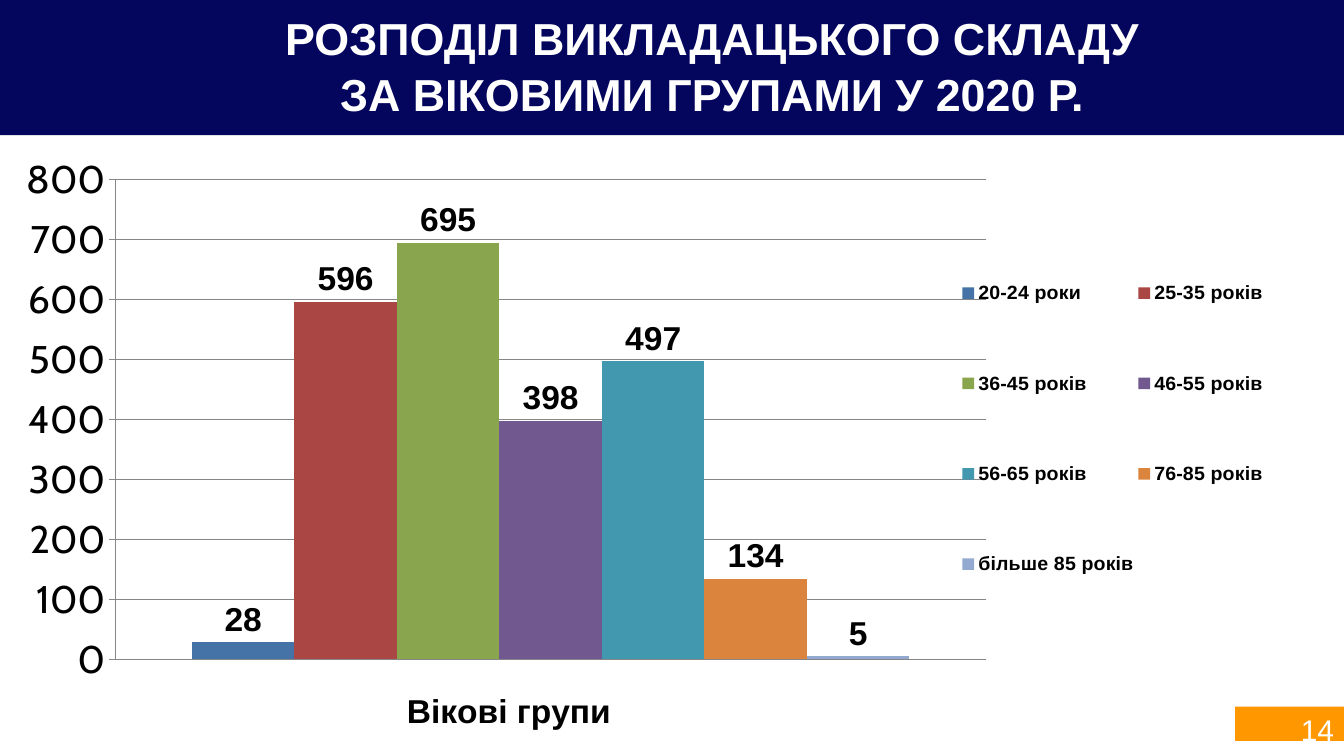
import pptx
import pptx.chart.data
import pptx.dml.color
import pptx.enum.chart
import pptx.enum.shapes
import pptx.enum.text
import pptx.oxml
import pptx.oxml.ns
import pptx.util
from pptx.util import Inches

COLORS = {
    "band": "04065D",
    "badge": "FF9800",
    "white": "FFFFFF",
    "black": "000000",
    "grid": "868686",
}
AGE_GROUPS = [
    ("20-24 роки", 28, "4572A7"),
    ("25-35 років", 596, "AA4643"),
    ("36-45 років", 695, "89A54E"),
    ("46-55 років", 398, "71588F"),
    ("56-65 років", 497, "4198AF"),
    ("76-85 років", 134, "DB843D"),
    ("більше 85 років", 5, "93A9CF"),
]


def rgb(value):
    return pptx.dml.color.RGBColor.from_string(value)


def set_font(font, size, color="black", bold=False, name="Arial"):
    font.name = name
    font.size = pptx.util.Pt(size)
    font.bold = bold
    font.color.rgb = rgb(COLORS[color])


def write_text(frame, text, align="CENTER", spacing=1.0, **font_format):
    """Fill a text frame with one paragraph; newlines become line breaks."""
    frame.word_wrap = True
    frame.auto_size = pptx.enum.text.MSO_AUTO_SIZE.NONE
    frame.vertical_anchor = pptx.enum.text.MSO_ANCHOR.TOP
    para = frame.paragraphs[0]
    para.alignment = getattr(pptx.enum.text.PP_ALIGN, align)
    para.line_spacing = spacing
    for number, line in enumerate(text.split("\n")):
        if number:
            para.add_line_break()
        span = para.add_run()
        span.text = line
        set_font(span.font, **font_format)


def place(shape, left, top, width, height):
    shape.left, shape.top = Inches(left), Inches(top)
    shape.width, shape.height = Inches(width), Inches(height)


def add_rectangle(slide, left, top, width, height, color):
    box = slide.shapes.add_shape(
        pptx.enum.shapes.MSO_SHAPE.RECTANGLE,
        Inches(left), Inches(top), Inches(width), Inches(height))
    box.shadow.inherit = False
    box.fill.solid()
    box.fill.fore_color.rgb = rgb(COLORS[color])
    box.line.fill.background()
    return box


def set_layout(element, inner=False, **fractions):
    """Place a chart part by fractions (x, y, w, h) of the chart area."""
    qn = pptx.oxml.ns.qn
    for old in element.findall(qn("c:layout")):
        element.remove(old)
    target = '<c:layoutTarget val="inner"/>' if inner else ""
    modes = "".join(f'<c:{key}Mode val="edge"/>' for key in "xy")
    sizes = "".join(f'<c:{key} val="{value}"/>' for key, value in fractions.items())
    layout = pptx.oxml.parse_xml(
        f'<c:layout {pptx.oxml.ns.nsdecls("c")}><c:manualLayout>'
        f"{target}{modes}{sizes}</c:manualLayout></c:layout>")
    overlay = element.find(qn("c:overlay"))
    if overlay is None:
        element.insert(0, layout)
    else:
        overlay.addprevious(layout)


def format_axes(chart):
    values = chart.value_axis
    values.minimum_scale, values.maximum_scale = 0, 800
    values.major_unit = 100
    set_font(values.tick_labels.font, 28, name="Cabin")
    for line in (values.format.line, values.major_gridlines.format.line,
                 chart.category_axis.format.line):
        line.color.rgb = rgb(COLORS["grid"])
        line.width = pptx.util.Pt(0.75)

    groups = chart.category_axis
    groups.tick_label_position = pptx.enum.chart.XL_TICK_LABEL_POSITION.NONE
    groups.major_tick_mark = pptx.enum.chart.XL_TICK_MARK.NONE
    span = groups.axis_title.text_frame.paragraphs[0].add_run()
    span.text = "Вікові групи"
    set_font(span.font, 24, bold=True)
    set_layout(groups.axis_title._element, x=0.3, y=0.92)


def format_columns(plot):
    plot.gap_width, plot.overlap = 150, 0
    plot.vary_by_categories = False
    for series, (_, _, color) in zip(plot.series, AGE_GROUPS):
        series.format.fill.solid()
        series.format.fill.fore_color.rgb = rgb(color)
        labels = series.data_labels
        labels.show_value = True
        labels.position = pptx.enum.chart.XL_LABEL_POSITION.OUTSIDE_END
        set_font(labels.font, 24, bold=True)


def add_age_chart(slide):
    data = pptx.chart.data.CategoryChartData()
    data.categories = ["1"]
    for name, count, _ in AGE_GROUPS:
        data.add_series(name, [count])
    chart = slide.shapes.add_chart(
        pptx.enum.chart.XL_CHART_TYPE.COLUMN_CLUSTERED,
        Inches(0.26), Inches(1.55), Inches(12.31), Inches(5.8), data).chart
    set_font(chart.font, 10, name="Cabin")
    chart.has_title = False
    format_axes(chart)
    format_columns(chart.plots[0])
    set_layout(chart._chartSpace.chart.plotArea, inner=True,
               x=0.069, y=0.041, w=0.704, h=0.836)

    chart.has_legend = True
    chart.legend.position = pptx.enum.chart.XL_LEGEND_POSITION.BOTTOM
    chart.legend.include_in_layout = False
    set_font(chart.legend.font, 14, bold=True)
    set_layout(chart.legend._element, x=0.75, y=0.1, w=0.25, h=0.75)


def main():
    deck = pptx.Presentation()
    deck.slide_width, deck.slide_height = Inches(13.33), Inches(7.5)
    slide = deck.slides.add_slide(deck.slide_layouts[5])

    band = add_rectangle(slide, 0, 0, 13.33, 1.34, "band")
    title = slide.shapes.title
    band._element.addnext(title._element)
    place(title, 1.15, 0.03, 11.83, 1.07)
    write_text(title.text_frame,
               "РОЗПОДІЛ ВИКЛАДАЦЬКОГО СКЛАДУ\nЗА ВІКОВИМИ ГРУПАМИ У 2020 Р.",
               spacing=1.05, size=32, color="white", bold=True)

    add_age_chart(slide)

    add_rectangle(slide, 12.25, 7.01, 1.08, 0.34, "badge")
    number = slide.shapes.add_textbox(
        Inches(12.07), Inches(7.01), Inches(1.26), Inches(0.34))
    write_text(number.text_frame, "14", align="RIGHT", size=21.3, color="white")

    deck.save("out.pptx")


if __name__ == "__main__":
    main()
